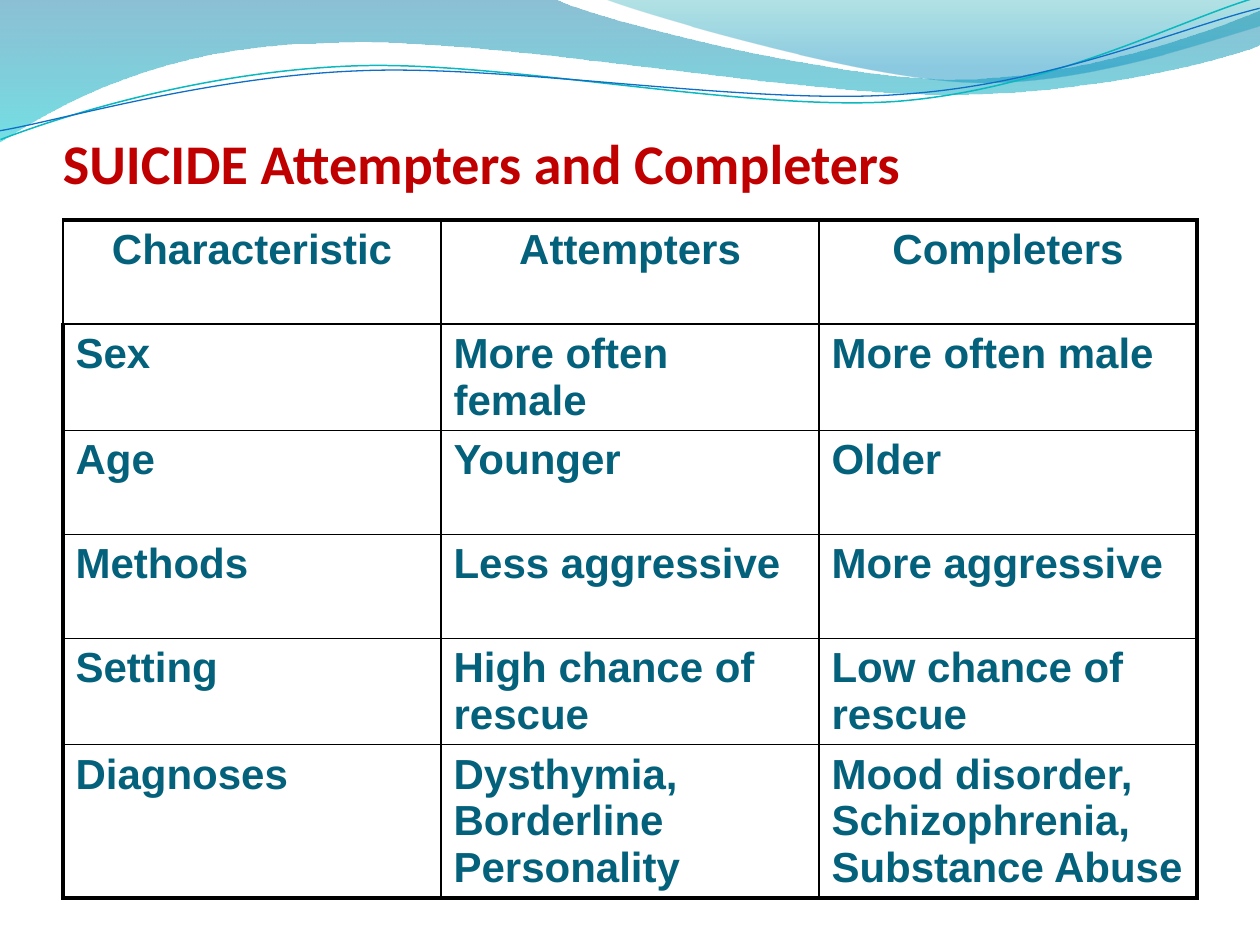
from lxml.etree import SubElement
from pptx import Presentation
from pptx.dml.color import RGBColor
from pptx.enum.text import MSO_ANCHOR, PP_ALIGN
from pptx.oxml import parse_xml
from pptx.oxml.ns import nsdecls, qn
from pptx.util import Pt

# Content
TITLE = "SUICIDE Attempters and Completers"
ROWS = [
    ("Characteristic", "Attempters", "Completers"),
    ("Sex", "More often female", "More often male"),
    ("Age", "Younger", "Older"),
    ("Methods", "Less aggressive", "More aggressive"),
    ("Setting", "High chance of rescue", "Low chance of rescue"),
    ("Diagnoses", "Dysthymia, Borderline Personality",
     "Mood disorder, Schizophrenia, Substance Abuse"),
]
COLORS = {
    "title": "C00000", "text": "04617B", "border": "000000",
    "wave top": "0074A1", "wave bottom": "00C6CF",
    "crest top": "00A1A9", "crest bottom": "008BBF",
    "teal line": "0AB8BF", "blue line": "0F6FC6",
}

# Outlines in px: one point is a straight step, three points are a Bezier curve
WAVES = [
    {"outline": [[(0, 0)], [(554, -1)],
                 [(600, 21), (837, 79), (955, 79)],
                 [(1075, 79), (1207, 33), (1260, 11)], [(1261, 45)],
                 [(1239, 55), (1096, 96), (940, 94)],
                 [(784, 94), (481, 35), (324, 43)],
                 [(163, 45), (58, 105), (-1, 142)]],
     "stops": [(0, "wave top", 45), (1, "wave bottom", 55)]},
    {"outline": [[(604, -1)],
                 [(641, 14), (859, 78), (969, 82)],
                 [(1079, 87), (1211, 40), (1260, 26)], [(1260, 0)]],
     "stops": [(0, "crest top", 30), (0.8, "crest bottom", 45)]},
]
LINES = [
    {"outline": [[(-2, 110)], [(58, 90), (199, 52), (350, 53)],
                 [(499, 53), (745, 118), (896, 114)],
                 [(1049, 109), (1184, 45), (1260, 27)]],
     "color": "teal line", "width": 0.85},
    {"outline": [[(-2, 101)], [(57, 94), (207, 57), (357, 58)],
                 [(509, 58), (750, 112), (902, 107)],
                 [(1052, 104), (1188, 52), (1262, 38)]],
     "color": "blue line", "width": 0.75},
]
LINE_ROTATION = 357.3
LEFT, TABLE_TOP, COLUMN_WIDTH, ROW_HEIGHT = 63, 220, 378, 104
THICK, THIN = 2.25, 1
LINE_PITCH = 26.8


def px(value):
    return round(value * 914400 / 126)


def rgb(name):
    return RGBColor.from_string(COLORS[name])


def add_outline(slide, outline, close):
    """Join the segment ends with a freeform, then bend the curved segments."""
    start, *ends = [(px(x), px(y)) for x, y in (segment[-1] for segment in outline)]
    builder = slide.shapes.build_freeform(*start, scale=1.0)
    builder.add_line_segments(ends, close=close)
    shape = builder.convert_to_shape()
    shape.shadow.inherit = False
    steps = list(shape._element.iter(qn("a:lnTo")))
    for step, segment in zip(steps, outline[1:]):
        if len(segment) == 3:
            step.getparent().replace(step, curve_element(shape, segment))
    return shape


def curve_element(shape, segment):
    points = "".join(f'<a:pt x="{px(x) - shape.left}" y="{px(y) - shape.top}"/>'
                     for x, y in segment)
    return parse_xml(f'<a:cubicBezTo {nsdecls("a")}>{points}</a:cubicBezTo>')


def add_text(paragraph, text, font_name, size, color):
    run = paragraph.add_run()
    run.text = text
    run.font.name, run.font.size, run.font.bold = font_name, Pt(size), True
    run.font.color.rgb = rgb(color)


def set_borders(cell, widths):
    properties = cell._tc.get_or_add_tcPr()
    for index, (side, width) in enumerate(zip("LRTB", widths)):
        properties.insert(index, parse_xml(
            f'<a:ln{side} {nsdecls("a")} w="{Pt(width)}"><a:solidFill>'
            f'<a:srgbClr val="{COLORS["border"]}"/></a:solidFill></a:ln{side}>'))


def main():
    presentation = Presentation()
    presentation.slide_width, presentation.slide_height = px(1260), px(945)
    slide = presentation.slides.add_slide(presentation.slide_layouts[6])

    # Waves across the top
    for wave in WAVES:
        shape = add_outline(slide, wave["outline"], True)
        shape.line.fill.background()
        shape.fill.gradient()
        shape.fill.gradient_angle = 270
        for stop, (position, color, opacity) in zip(shape.fill.gradient_stops, wave["stops"]):
            stop.position = position
            stop.color.rgb = rgb(color)
            SubElement(stop._gs[0], qn("a:alpha")).set("val", str(opacity * 1000))

    # Thin lines following the waves
    for line in LINES:
        shape = add_outline(slide, line["outline"], False)
        shape.rotation = LINE_ROTATION
        shape.fill.background()
        shape.line.color.rgb = rgb(line["color"])
        shape.line.width = Pt(line["width"])

    # Title
    title = slide.shapes.add_textbox(px(LEFT), px(38), px(1134), px(158))
    frame = title.text_frame
    frame.word_wrap = True
    frame.vertical_anchor = MSO_ANCHOR.BOTTOM
    frame.margin_left = frame.margin_right = frame.margin_bottom = 0
    add_text(frame.paragraphs[0], TITLE, "Calibri", 32, "title")

    # Comparison table
    last_row, last_column = len(ROWS) - 1, len(ROWS[0]) - 1
    table = slide.shapes.add_table(
        len(ROWS), len(ROWS[0]), px(LEFT), px(TABLE_TOP),
        px(COLUMN_WIDTH * len(ROWS[0])), px(ROW_HEIGHT * len(ROWS))).table
    table.horz_banding = False
    for r, texts in enumerate(ROWS):
        for c, text in enumerate(texts):
            cell = table.cell(r, c)
            cell.fill.background()
            set_borders(cell, (THICK if c == 0 and r > 0 else THIN,
                               THICK if c == last_column else THIN,
                               THICK if r == 0 else THIN,
                               THICK if r == last_row else THIN))
            paragraph = cell.text_frame.paragraphs[0]
            paragraph.alignment = PP_ALIGN.CENTER if r == 0 else PP_ALIGN.LEFT
            paragraph.line_spacing = Pt(LINE_PITCH)
            add_text(paragraph, text, "Arial", 24, "text")

    presentation.save("out.pptx")


if __name__ == "__main__":
    main()
